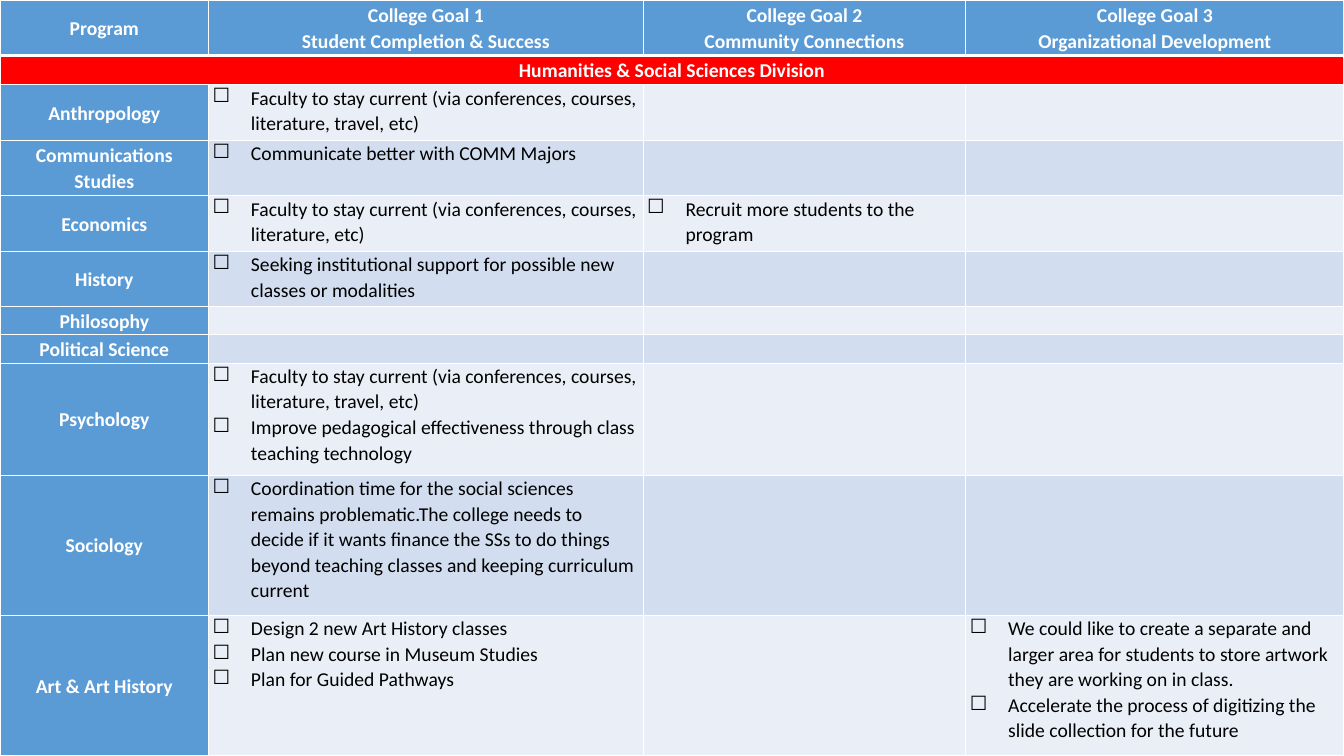
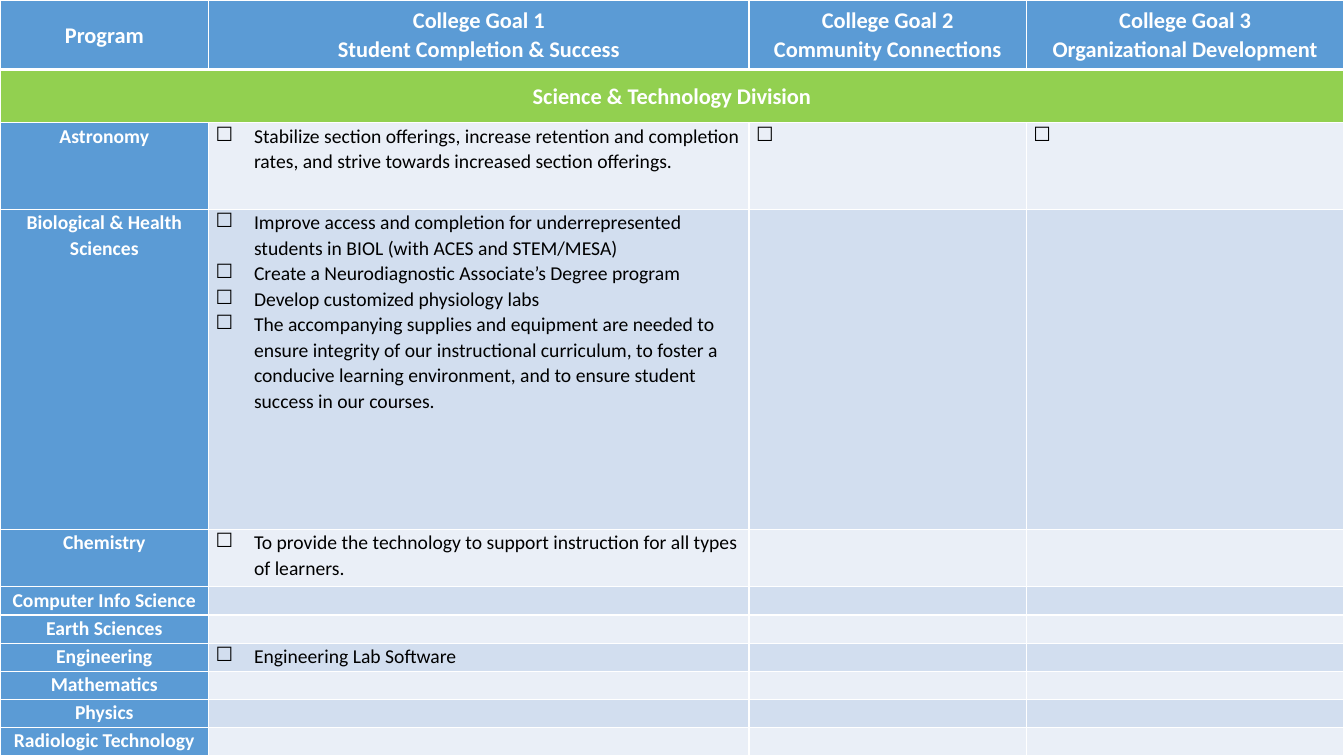
from lxml.etree import SubElement
from pptx import Presentation
from pptx.dml.color import RGBColor
from pptx.enum.text import MSO_ANCHOR, PP_ALIGN
from pptx.oxml.ns import qn
from pptx.util import Inches, Pt

BLUE = RGBColor(0x5B, 0x9B, 0xD5)
PALE = RGBColor(0xEA, 0xEF, 0xF7)
SOFT = RGBColor(0xD2, 0xDE, 0xEF)
RED = RGBColor(0xFF, 0x00, 0x00)
GREEN = RGBColor(0x92, 0xD0, 0x50)
WHITE = RGBColor(0xFF, 0xFF, 0xFF)
BLACK = RGBColor(0x00, 0x00, 0x00)

HEADINGS = [
    "Program",
    "College Goal 1\nStudent Completion & Success",
    "College Goal 2\nCommunity Connections",
    "College Goal 3\nOrganizational Development",
]
STAY_CURRENT = "Faculty to stay current (via conferences, courses, literature, travel, etc)"

HUMANITIES = [
    ("Anthropology", [STAY_CURRENT]),
    ("Communications Studies", ["Communicate better with COMM Majors"]),
    (
        "Economics",
        ["Faculty to stay current (via conferences, courses, literature, etc)"],
        ["Recruit more students to the program"],
    ),
    ("History", ["Seeking institutional support for possible new classes or modalities"]),
    ("Philosophy",),
    ("Political Science",),
    (
        "Psychology",
        [
            STAY_CURRENT,
            "Improve pedagogical effectiveness through class teaching technology",
        ],
    ),
    (
        "Sociology",
        [
            "Coordination time for the social sciences remains problematic."
            "The college needs to decide if it wants finance the SSs to do things "
            "beyond teaching classes and keeping curriculum current"
        ],
    ),
    (
        "Art & Art History",
        [
            "Design 2 new Art History classes",
            "Plan new course in Museum Studies",
            "Plan for Guided Pathways",
        ],
        [],
        [
            "We could like to create a separate and larger area for students "
            "to store artwork they are working on in class.",
            "Accelerate the process of digitizing the slide collection for the future",
        ],
    ),
]

SCIENCES = [
    (
        "Astronomy",
        [
            "Stabilize section offerings, increase retention and completion rates, "
            "and strive towards increased section offerings."
        ],
        [" "],
        [" "],
    ),
    (
        "Biological & Health Sciences",
        [
            "Improve access and completion for underrepresented students in BIOL "
            "(with ACES and STEM/MESA)",
            "Create a Neurodiagnostic Associate’s Degree program",
            "Develop customized physiology labs",
            "The accompanying supplies and equipment are needed to ensure integrity "
            "of our instructional curriculum, to foster a conducive learning "
            "environment, and to ensure student success in our courses.",
        ],
    ),
    (
        "Chemistry",
        ["To provide the technology to support instruction for all types of learners."],
    ),
    ("Computer Info Science",),
    ("Earth Sciences",),
    ("Engineering", ["Engineering Lab Software"]),
    ("Mathematics",),
    ("Physics",),
    ("Radiologic Technology",),
]


class GoalDeck:
    FONT = "Calibri"
    BODY_SIZE = 14
    LINE_SPACING = 1.07
    INDENT = Inches(0.38)
    THIN, THICK = Pt(1), Pt(3)

    def __init__(self):
        self.deck = Presentation()
        self.deck.slide_width = Inches(13.33)
        self.deck.slide_height = Inches(7.5)
        self.slide = None

    def add_slide(self):
        self.slide = self.deck.slides.add_slide(self.deck.slide_layouts[6])

    def share(self, lines, weights, total, side):
        for line, weight in zip(lines, weights):
            setattr(line, side, int(total * weight / sum(weights)))

    def grid(self, columns, rows):
        width, height = self.deck.slide_width, self.deck.slide_height
        table = self.slide.shapes.add_table(
            len(rows), len(columns), 0, 0, width, height
        ).table
        table.first_row = table.horz_banding = False
        self.share(table.columns, columns, width, "width")
        self.share(table.rows, rows, height, "height")
        return table

    def borders(self, cell, top, bottom):
        properties = cell._tc.get_or_add_tcPr()
        widths = {"a:lnL": self.THIN, "a:lnR": self.THIN, "a:lnT": top, "a:lnB": bottom}
        for side, width in widths.items():
            line = SubElement(properties, qn(side), w=str(int(width)))
            fill = SubElement(line, qn("a:solidFill"))
            SubElement(fill, qn("a:srgbClr"), val=str(WHITE))

    def cell(self, cell, text, fill, inset, size, color=WHITE, bold=True,
             anchor=MSO_ANCHOR.MIDDLE, align=PP_ALIGN.CENTER, top=THIN, bottom=THIN):
        self.borders(cell, top, bottom)
        cell.fill.solid()
        cell.fill.fore_color.rgb = fill
        cell.margin_left = cell.margin_right = Inches(inset)
        cell.margin_top = cell.margin_bottom = 0
        cell.vertical_anchor = anchor
        cell.text_frame.text = text
        for paragraph in cell.text_frame.paragraphs:
            paragraph.alignment = align
            paragraph.line_spacing = self.LINE_SPACING
            for run in paragraph.runs:
                run.font.name = self.FONT
                run.font.size = Pt(size)
                run.font.bold = bold
                run.font.color.rgb = color
            if not paragraph.runs:
                SubElement(paragraph._p, qn("a:endParaRPr"), sz=str(size * 100))

    def goals(self, cell, items, fill, inset):
        self.cell(cell, "\n".join(items), fill, inset, self.BODY_SIZE, BLACK, False,
                  MSO_ANCHOR.TOP, PP_ALIGN.LEFT)
        if items:
            for paragraph in cell.text_frame.paragraphs:
                properties = paragraph._p.get_or_add_pPr()
                properties.set("marL", str(self.INDENT))
                properties.set("indent", str(-self.INDENT))
                SubElement(properties, qn("a:buChar"), char="☐")

    def division(self, title, accent, programs, columns, rows, inset, size, anchor):
        self.add_slide()
        table = self.grid(columns, rows)
        for column, heading in enumerate(HEADINGS):
            self.cell(table.cell(0, column), heading, BLUE, inset, size,
                      bottom=self.THICK)
            self.cell(table.cell(1, column), "" if column else title, accent, inset,
                      size, top=self.THICK)
        table.cell(1, 0).merge(table.cell(1, len(columns) - 1))
        for row, (program, *goals) in enumerate(programs, start=2):
            self.cell(table.cell(row, 0), program, BLUE, inset, self.BODY_SIZE,
                      anchor=anchor)
            band = SOFT if row % 2 else PALE
            for column in range(1, len(columns)):
                items = goals[column - 1] if column <= len(goals) else []
                self.goals(table.cell(row, column), items, band, inset)


def main():
    goals = GoalDeck()
    goals.division(
        "Humanities & Social Sciences Division", RED, HUMANITIES,
        columns=[2.07, 4.31, 3.2, 3.75],
        rows=[0.55, 0.29] + [0.55] * 4 + [0.28] * 2 + [1.11, 1.39, 1.39],
        inset=0.04, size=14, anchor=MSO_ANCHOR.MIDDLE,
    )
    goals.division(
        "Science & Technology Division", GREEN, SCIENCES,
        columns=[2.07, 5.36, 2.75, 3.15],
        rows=[0.69, 0.53, 0.86, 3.18, 0.57] + [0.28] * 6,
        inset=0.07, size=16, anchor=MSO_ANCHOR.TOP,
    )
    goals.deck.save("out.pptx")


if __name__ == "__main__":
    main()
